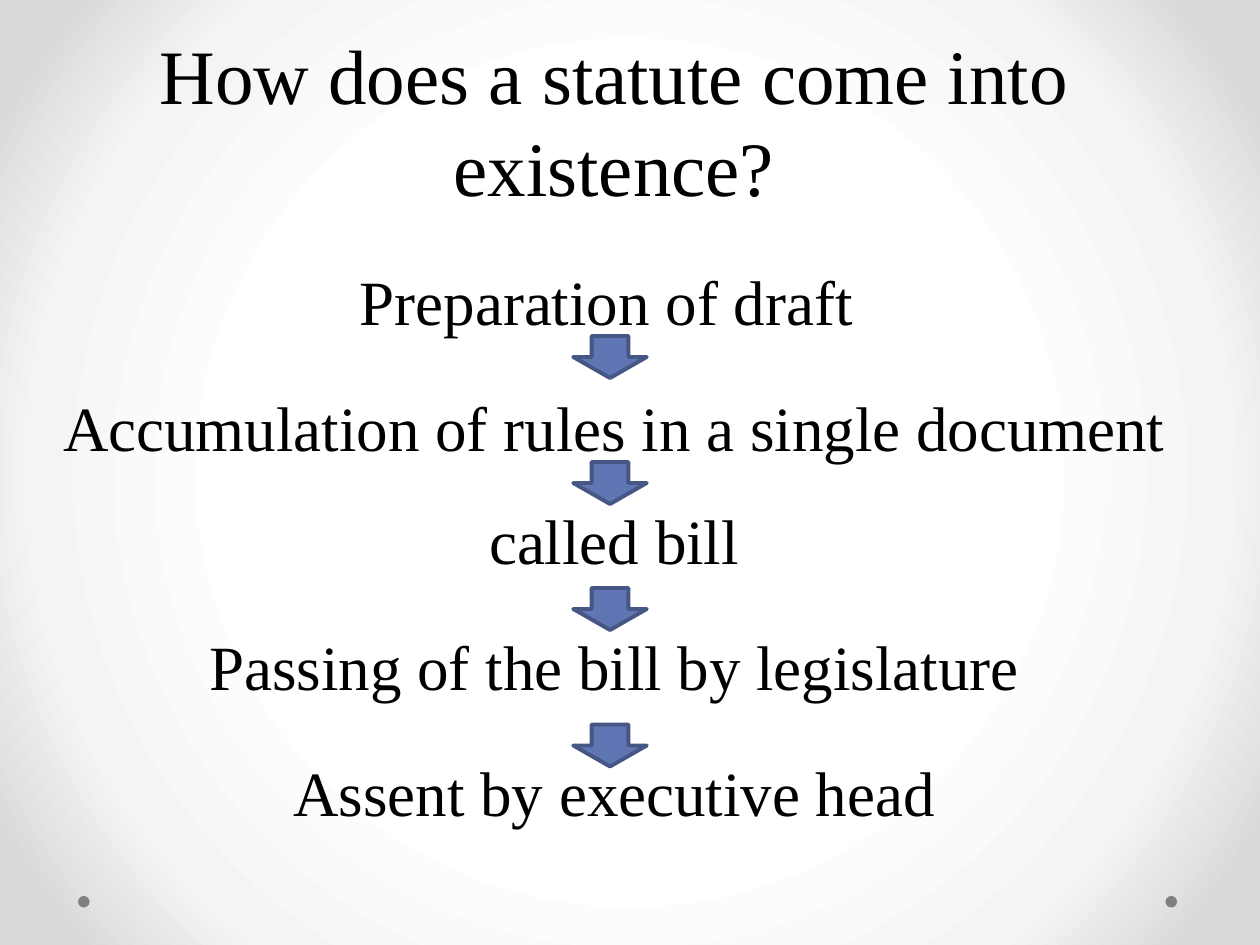
from lxml.etree import SubElement
from pptx import Presentation
from pptx.dml.color import RGBColor
from pptx.enum.shapes import MSO_SHAPE
from pptx.enum.text import MSO_ANCHOR, PP_ALIGN
from pptx.oxml.ns import qn
from pptx.util import Pt

HEADING = "How does a statute come into existence?"
STEPS = [
    "Preparation of draft ",  # the closing space shifts the centred line
    "Accumulation of rules in a single document called bill",
    "Passing of the bill by legislature",
    "Assent by executive head",
]
ARROW_TOPS = [192, 264, 336, 414]
DOT_LEFTS = [44.6, 666]
GLOW = [(0, "FFFFFF"), (50, "FFFFFF"), (76, "F4F4F4"), (92, "DADADA"), (100, "DADADA")]


def color(hex_code):
    return RGBColor.from_string(hex_code)


def paint_background(slide, stops):
    """Fill the background with a circular gradient from the centre outwards."""
    slide.background.fill.gradient()
    gradient = next(slide.element.iter(qn("a:gradFill")))
    for child in list(gradient):
        gradient.remove(child)
    stop_list = SubElement(gradient, qn("a:gsLst"))
    for percent, hex_code in stops:
        stop = SubElement(stop_list, qn("a:gs"), pos=str(percent * 1000))
        SubElement(stop, qn("a:srgbClr"), val=hex_code)
    circle = SubElement(gradient, qn("a:path"), path="circle")
    SubElement(circle, qn("a:fillToRect"), l="50000", t="50000", r="50000", b="50000")


def add_figure(slide, preset, left, top, width, height, fill, line=None, weight=0):
    figure = slide.shapes.add_shape(preset, Pt(left), Pt(top), Pt(width), Pt(height))
    figure.shadow.inherit = False
    figure.fill.solid()
    figure.fill.fore_color.rgb = color(fill)
    if line:
        figure.line.color.rgb = color(line)
        figure.line.width = Pt(weight)
    else:
        figure.line.fill.background()


def write(paragraph, text, size, spacing=1.0, font="Times New Roman", fill="000000"):
    paragraph.alignment = PP_ALIGN.CENTER
    paragraph.line_spacing = spacing
    paragraph.space_before = Pt(size * 0.2)
    run = paragraph.add_run()
    run.text = text
    run.font.size = Pt(size)
    run.font.name = font
    run.font.color.rgb = color(fill)


def add_process_text(slide):
    frame = slide.shapes.add_textbox(Pt(18), Pt(12), Pt(666), Pt(510)).text_frame
    frame.word_wrap = True
    frame.vertical_anchor = MSO_ANCHOR.TOP
    write(frame.paragraphs[0], HEADING, size=44)
    for step in STEPS:
        write(frame.add_paragraph(), step, size=36, spacing=1.5)


def main():
    deck = Presentation()
    deck.slide_width, deck.slide_height = Pt(720), Pt(540)
    slide = deck.slides.add_slide(deck.slide_layouts[6])
    paint_background(slide, GLOW)
    for left in DOT_LEFTS:
        add_figure(slide, MSO_SHAPE.OVAL, left, 512, 6.6, 6.6, "808080")
    add_process_text(slide)
    for top in ARROW_TOPS:
        add_figure(slide, MSO_SHAPE.DOWN_ARROW, 327.6, top, 42, 24,
                   "6076B4", line="475785", weight=2.25)
    deck.save("out.pptx")


if __name__ == "__main__":
    main()
